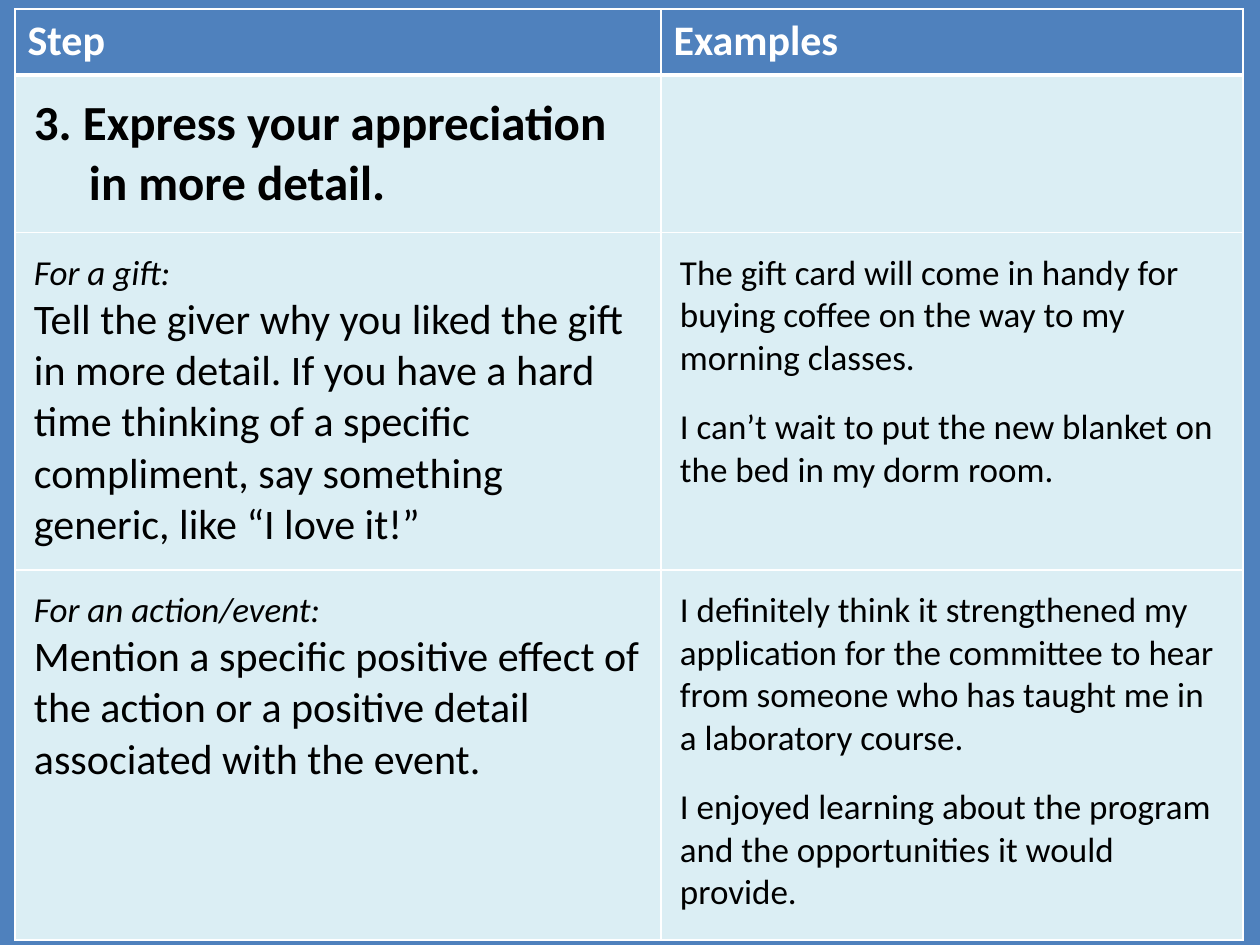
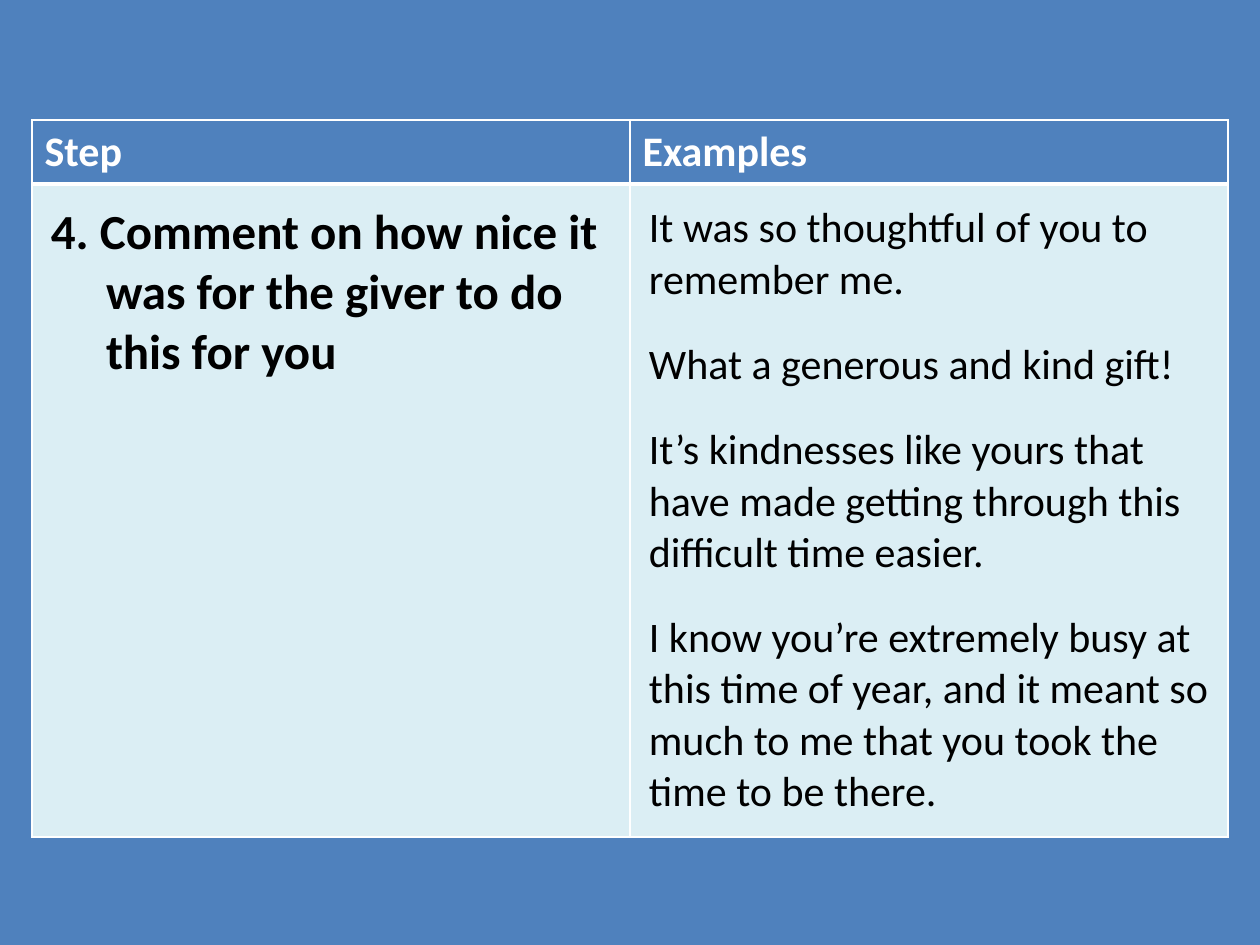
import dataclasses

import pptx
import pptx.dml.color
import pptx.oxml.ns
import pptx.presentation
import pptx.table
import pptx.util
from lxml import etree

PX = 914400 / 126  # EMU in one px
FONT = "Calibri"
COLORS = {"blue": "4F81BD", "pale": "DBEEF4", "white": "FFFFFF", "black": "000000"}
INSET = 19
HANG = 55
THIN, THICK = 1, 3


@dataclasses.dataclass(frozen=True)
class Para:
    text: str
    size: int = 24
    bold: bool = False
    italic: bool = False
    gap: float = 0
    hang: int = 0
    color: str = "black"


@dataclasses.dataclass(frozen=True)
class Grid:
    left: int
    top: int
    cols: list[int]
    rows: list[int]
    body: list[list[list[Para]]]


def emu(px: int) -> pptx.util.Emu:
    return pptx.util.Emu(round(px * PX))


def rgb(name: str) -> pptx.dml.color.RGBColor:
    return pptx.dml.color.RGBColor.from_string(COLORS[name])


def head(text: str) -> list[Para]:
    return [Para(text, bold=True, color="white")]


def step(text: str) -> list[Para]:
    return [Para(text, 28, bold=True, hang=HANG)]


def advice(label: str, text: str) -> list[Para]:
    return [Para(label, 20, italic=True), Para(text)]


def samples(size: int, gap: float, *texts: str) -> list[Para]:
    return [Para(text, size, gap=gap if i else 0) for i, text in enumerate(texts)]


def edge(cell: pptx.table._Cell, side: str, width: int) -> None:
    """Draw a white border on one side (L, R, T or B) of a cell."""
    line = etree.SubElement(cell._tc.get_or_add_tcPr(), pptx.oxml.ns.qn(f"a:ln{side}"))
    line.set("w", str(pptx.util.Pt(width)))
    fill = etree.SubElement(line, pptx.oxml.ns.qn("a:solidFill"))
    etree.SubElement(fill, pptx.oxml.ns.qn("a:srgbClr")).set("val", COLORS["white"])


def write(cell: pptx.table._Cell, paras: list[Para]) -> None:
    frame = cell.text_frame
    frame.text = "\n".join(para.text for para in paras)
    for line, para in zip(frame.paragraphs, paras):
        line.space_before = pptx.util.Pt(para.gap)
        if para.hang:
            props = line._p.get_or_add_pPr()
            props.set("marL", str(emu(para.hang)))
            props.set("indent", str(-emu(para.hang)))
        for run in line.runs:
            font = run.font
            font.name, font.size = FONT, pptx.util.Pt(para.size)
            font.bold, font.italic = para.bold, para.italic
            font.color.rgb = rgb(para.color)


def style(cell: pptx.table._Cell, row: int) -> None:
    """Set borders, fill and margins by the row of the cell."""
    edge(cell, "L", THIN)
    edge(cell, "R", THIN)
    edge(cell, "T", THICK if row == 1 else THIN)
    edge(cell, "B", THICK if row == 0 else THIN)
    cell.fill.solid()
    cell.fill.fore_color.rgb = rgb("pale" if row else "blue")
    if row:
        cell.margin_left = cell.margin_right = emu(INSET)
        cell.margin_top = cell.margin_bottom = emu(INSET)


def draw(deck: pptx.presentation.Presentation, grid: Grid) -> None:
    slide = deck.slides.add_slide(deck.slide_layouts[6])
    slide.background.fill.solid()
    slide.background.fill.fore_color.rgb = rgb("blue")
    table = slide.shapes.add_table(
        len(grid.rows), len(grid.cols), emu(grid.left), emu(grid.top),
        emu(sum(grid.cols)), emu(sum(grid.rows))).table
    table.horz_banding = False
    for col, width in zip(table.columns, grid.cols):
        col.width = emu(width)
    for row, height in zip(table.rows, grid.rows):
        row.height = emu(height)
    for r, line in enumerate([[head("Step"), head("Examples")], *grid.body]):
        for c, paras in enumerate(line):
            cell = table.cell(r, c)
            style(cell, r)
            write(cell, paras)


DETAIL = Grid(15, 9, [646, 582], [66, 157, 335, 370], [
    [step("3. Express your appreciation in more detail."), []],
    [advice("For a gift:",
            "Tell the giver why you liked the gift in more detail. If you have a hard "
            "time thinking of a specific compliment, say something generic, like "
            "“I love it!”"),
     samples(20, 14.6,
             "The gift card will come in handy for buying coffee on the way to my "
             "morning classes.",
             "I can’t wait to put the new blanket on the bed in my dorm room.")],
    [advice("For an action/event:",
            "Mention a specific positive effect of the action or a positive detail "
            "associated with the event."),
     samples(20, 14.6,
             "I definitely think it strengthened my application for the committee to "
             "hear from someone who has taught me in a laboratory course.",
             "I enjoyed learning about the program and the opportunities it would "
             "provide.")],
])

KINDNESS = Grid(32, 120, [598, 598], [63, 653], [
    [step("4. Comment on how nice it was for the giver to do this for you"),
     samples(24, 19.5,
             "It was so thoughtful of you to remember me.",
             "What a generous and kind gift!",
             "It’s kindnesses like yours that have made getting through this "
             "difficult time easier.",
             "I know you’re extremely busy at this time of year, and it meant so much "
             "to me that you took the time to be there.")],
])


def main() -> None:
    deck = pptx.Presentation()
    deck.slide_width, deck.slide_height = emu(1260), emu(945)
    for grid in (DETAIL, KINDNESS):
        draw(deck, grid)
    deck.save("out.pptx")


if __name__ == "__main__":
    main()
